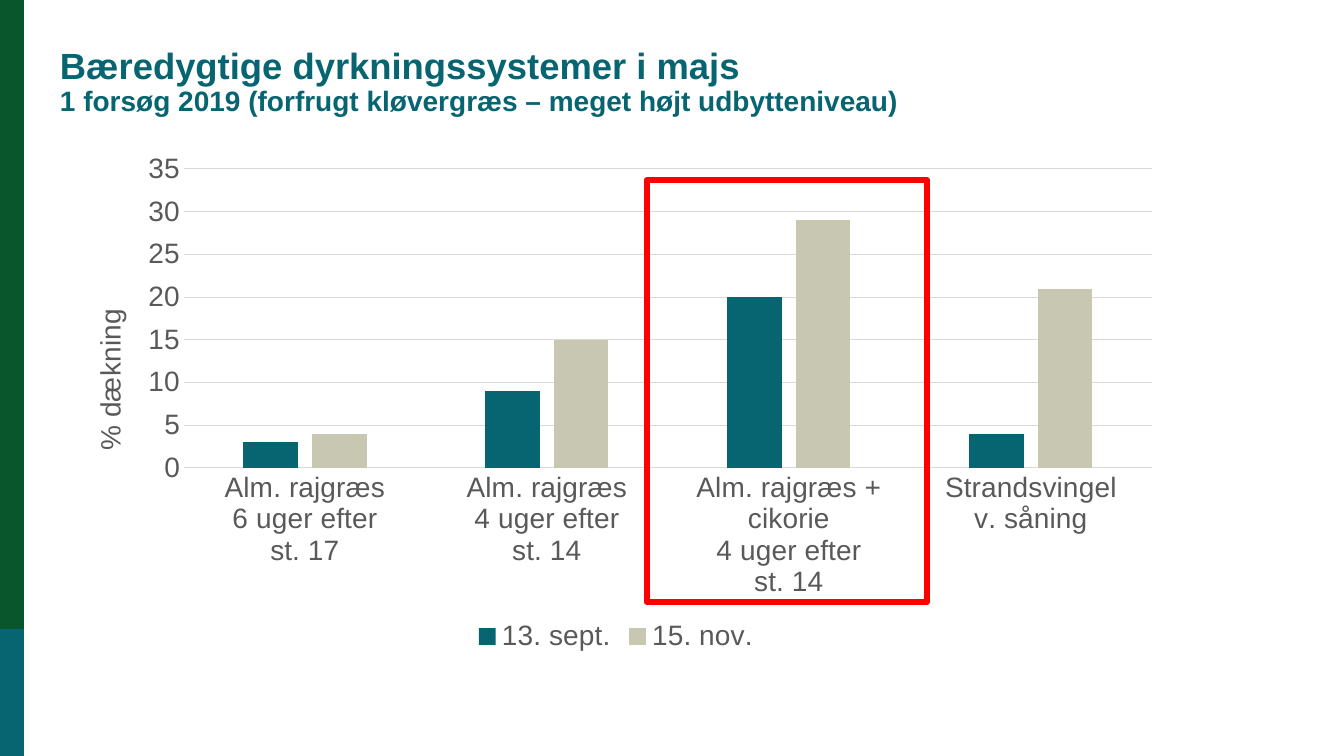
from lxml import etree
from pptx import Presentation
from pptx.chart.data import CategoryChartData
from pptx.dml.color import RGBColor
from pptx.enum.chart import XL_CHART_TYPE, XL_LEGEND_POSITION, XL_TICK_MARK
from pptx.enum.shapes import MSO_SHAPE
from pptx.enum.text import MSO_ANCHOR
from pptx.oxml.ns import qn
from pptx.util import Pt

CLUSTERED = XL_CHART_TYPE.COLUMN_CLUSTERED
LEGEND_BOTTOM = XL_LEGEND_POSITION.BOTTOM
NO_TICK = XL_TICK_MARK.NONE
RECTANGLE = MSO_SHAPE.RECTANGLE
MIDDLE = MSO_ANCHOR.MIDDLE

TEAL = RGBColor(0x07, 0x64, 0x71)
GREEN = RGBColor(0x09, 0x56, 0x2C)
SAND = RGBColor(0xC8, 0xC7, 0xB2)
GREY = RGBColor(0x59, 0x59, 0x59)
GRID = RGBColor(0xD9, 0xD9, 0xD9)
RED = RGBColor(0xFF, 0x00, 0x00)

FONT = "Arial"
EMU_PER_PX = 914400 / 100.8
PAGE_WIDTH, PAGE_HEIGHT = 1344, 756

CATEGORIES = [
    "Alm. rajgræs\n6 uger efter\nst. 17",
    "Alm. rajgræs\n4 uger efter\nst. 14",
    "Alm. rajgræs + cikorie\n4 uger efter\nst. 14",
    "Strandsvingel\nv. såning",
]
SERIES = [
    ("13. sept.", (3, 9, 20, 4), TEAL),
    ("15. nov.", (4, 15, 29, 21), SAND),
]


def px(*lengths):
    return [round(length * EMU_PER_PX) for length in lengths]


def style_font(font, size, color, bold=False):
    font.name = FONT
    font.size = Pt(size)
    font.bold = bold
    font.color.rgb = color


def add_side_band(page, left, top, width, height):
    green_height = height * 629 // 756
    parts = ((top, green_height, GREEN),
             (top + green_height, height - green_height, TEAL))
    for part_top, part_height, color in parts:
        band = page.shapes.add_shape(RECTANGLE, *px(left, part_top, width, part_height))
        band.shadow.inherit = False
        band.fill.solid()
        band.fill.fore_color.rgb = color
        band.line.fill.background()


def add_heading(page, left, top, width, height):
    frame = page.shapes.add_textbox(*px(left, top, width, height)).text_frame
    frame.word_wrap = True
    frame.vertical_anchor = MIDDLE
    frame.margin_left = frame.margin_right = 0
    frame.margin_top = frame.margin_bottom = 0
    para = frame.paragraphs[0]
    para.line_spacing = 0.9
    span = para.add_run()
    span.text = "Bæredygtige dyrkningssystemer i majs"
    style_font(span.font, 26, TEAL, bold=True)
    para.add_line_break()
    span = para.add_run()
    span.text = "1 forsøg 2019 (forfrugt kløvergræs – meget højt udbytteniveau)"
    style_font(span.font, 20, TEAL, bold=True)


def set_layout(following, fractions, inner=False):
    """Put a manual chart layout in front of the given chart element."""
    parent = following.getparent()
    for old in parent.findall(qn("c:layout")):
        parent.remove(old)
    layout = etree.Element(qn("c:layout"))
    manual = etree.SubElement(layout, qn("c:manualLayout"))
    settings = [("layoutTarget", "inner")] if inner else []
    settings += [("xMode", "edge"), ("yMode", "edge")]
    settings += [(name, f"{value:.4f}") for name, value in zip("xywh", fractions)]
    for name, value in settings:
        etree.SubElement(manual, qn(f"c:{name}")).set("val", value)
    following.addprevious(layout)


def style_axes(chart):
    category_axis, value_axis = chart.category_axis, chart.value_axis
    for axis in (category_axis, value_axis):
        axis.major_tick_mark = axis.minor_tick_mark = NO_TICK
        style_font(axis.tick_labels.font, 20, GREY)
    value_axis.minimum_scale, value_axis.maximum_scale = 0, 35
    value_axis.major_unit = 5
    value_axis.format.line.fill.background()
    for line in (category_axis.format.line, value_axis.major_gridlines.format.line):
        line.color.rgb = GRID
        line.width = Pt(0.75)


def add_coverage_chart(page, left, top, width, height):
    data = CategoryChartData()
    data.categories = CATEGORIES
    for name, values, _ in SERIES:
        data.add_series(name, values)
    chart = page.shapes.add_chart(CLUSTERED, *px(left, top, width, height), data).chart
    chart.has_title = False
    style_font(chart.font, 20, GREY)
    style_axes(chart)

    plot = chart.plots[0]
    plot.gap_width, plot.overlap = 219, -27
    plot.vary_by_categories = False
    for series, (_, _, color) in zip(plot.series, SERIES):
        series.format.fill.solid()
        series.format.fill.fore_color.rgb = color

    chart.has_legend = True
    chart.legend.position = LEGEND_BOTTOM
    chart.legend.include_in_layout = False
    style_font(chart.legend.font, 20, GREY)

    axis_title = chart.value_axis.axis_title
    frame = axis_title.text_frame
    frame.text = "% dækning"
    style_font(frame.paragraphs[0].font, 20, GREY)
    title_element = axis_title.format.element if hasattr(axis_title.format, "element") else axis_title._element
    body = title_element.find(".//" + qn("a:bodyPr"))
    body.set("rot", "-5400000")
    body.set("vert", "horz")

    set_layout(title_element.find(qn("c:overlay")), (28 / width, 161 / height))
    bars = chart.element.find(".//" + qn("c:barChart")) if hasattr(chart, "element") else \
        chart._chartSpace.find(".//" + qn("c:barChart"))
    set_layout(bars, (125 / width, 26 / height, 968 / width, 299 / height), inner=True)


def add_highlight(page, left, top, width, height):
    frame = page.shapes.add_shape(RECTANGLE, *px(left, top, width, height))
    frame.shadow.inherit = False
    frame.fill.background()
    frame.line.color.rgb = RED
    frame.line.width = Pt(4.5)


def main():
    deck = Presentation()
    deck.slide_width, deck.slide_height = px(PAGE_WIDTH, PAGE_HEIGHT)
    page = deck.slides.add_slide(deck.slide_layouts[6])
    add_side_band(page, 0, 0, 24, PAGE_HEIGHT)
    add_heading(page, 60, 43, 1033, 79)
    add_coverage_chart(page, 59, 143, 1114, 515)
    add_highlight(page, 647, 180, 280, 422)
    deck.save("out.pptx")


if __name__ == "__main__":
    main()
